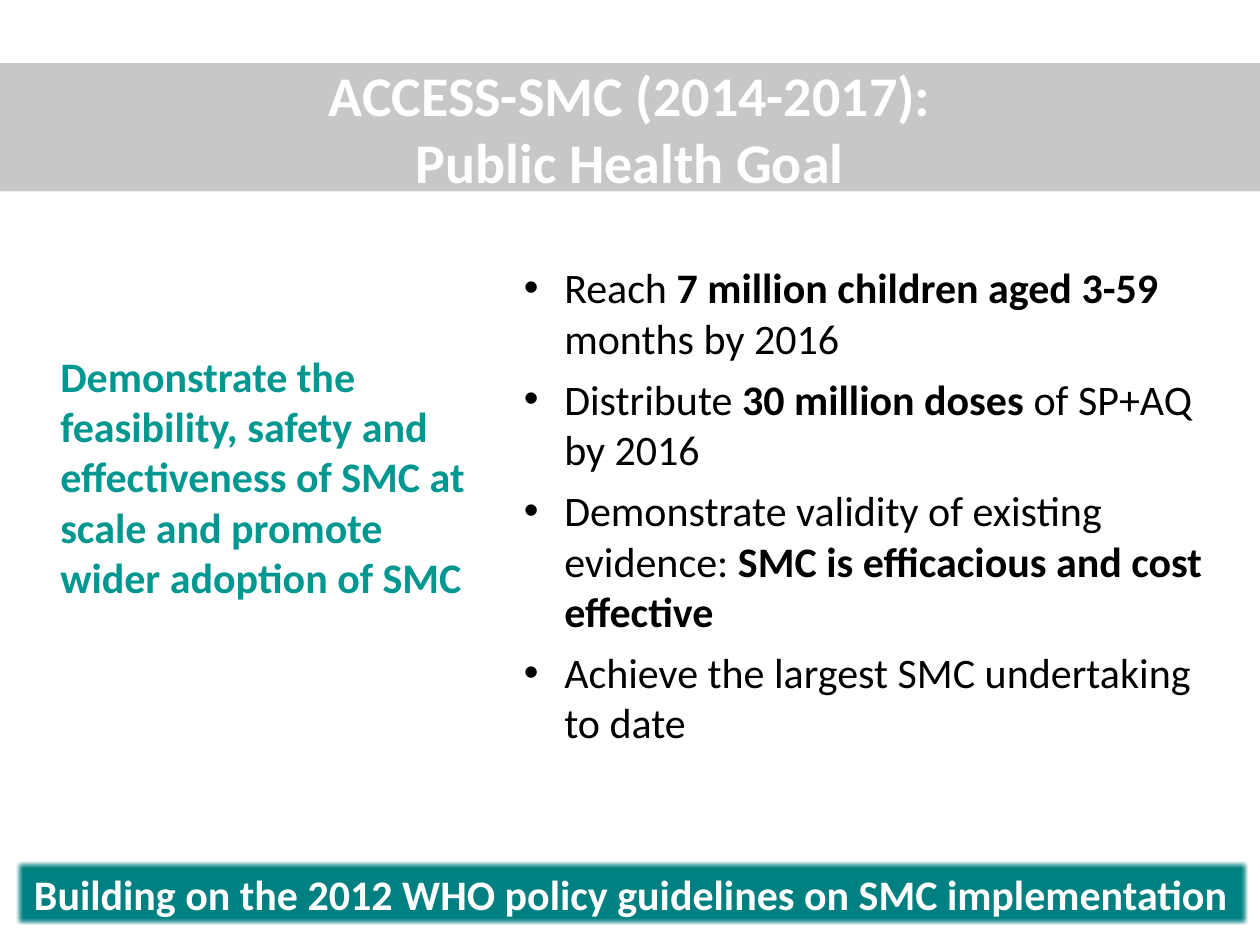
from lxml import etree
from pptx import Presentation
from pptx.dml.color import RGBColor
from pptx.enum.shapes import MSO_SHAPE
from pptx.enum.text import MSO_ANCHOR, MSO_AUTO_SIZE, PP_ALIGN
from pptx.oxml.ns import qn
from pptx.util import Inches, Pt

RECT = MSO_SHAPE.RECTANGLE
TOP, MIDDLE = MSO_ANCHOR.TOP, MSO_ANCHOR.MIDDLE
LEFT, CENTER = PP_ALIGN.LEFT, PP_ALIGN.CENTER
FIXED = MSO_AUTO_SIZE.NONE

# Content
TITLE = ["ACCESS-SMC (2014-2017):", "Public Health Goal"]
AIM = ("Demonstrate the feasibility, safety and effectiveness of SMC "
       "at scale and promote wider adoption of SMC")
# Each goal is a list of (text, bold) parts
GOALS = [
    [("Reach ", False), ("7 million children aged 3-59 ", True), ("months by 2016", False)],
    [("Distribute ", False), ("30 million doses ", True), ("of SP+AQ by 2016", False)],
    [("Demonstrate validity of existing evidence: ", False),
     ("SMC is efficacious and cost effective", True)],
    [("Achieve the largest SMC undertaking to date", False)],
]
BASIS = "Building on the 2012 WHO policy guidelines on SMC implementation"

THEME = {
    "font": "Calibri", "title": 32, "body": 24,
    "aim": "009790", "text": "000000", "light": "FFFFFF",
    "bar": "008080", "band": "A6A6A6",
}


def color(name):
    return RGBColor.from_string(THEME[name])


def style(para, size, tone, bold=None, align=LEFT):
    para.alignment = align
    font = para.font
    font.name, font.size = THEME["font"], Pt(THEME[size])
    font.color.rgb = color(tone)
    font.bold = bold


def place(shape, box):
    shape.left, shape.top, shape.width, shape.height = map(Inches, box)


def paint(shape, tone):
    shape.fill.solid()
    shape.fill.fore_color.rgb = color(tone)


def add_box(slide, box):
    frame = slide.shapes.add_textbox(*map(Inches, box)).text_frame
    frame.word_wrap = True
    return frame


def add_dot(para):
    props = para._p.get_or_add_pPr()
    props.set("marL", str(Inches(0.38)))
    props.set("indent", str(Inches(-0.32)))
    etree.SubElement(props, qn("a:buFont"), typeface="Arial")
    etree.SubElement(props, qn("a:buChar"), char="•")


deck = Presentation()
deck.slide_width, deck.slide_height = Inches(10), Inches(7.5)
slide = deck.slides.add_slide(deck.slide_layouts[5])

# Title on a translucent band
title = slide.shapes.title
place(title, (0, 0.5, 10, 1.02))
paint(title, "band")
tint = title._element.spPr.find(".//" + qn("a:srgbClr"))
etree.SubElement(tint, qn("a:alpha"), val="62000")
frame = title.text_frame
frame.text = "\n".join(TITLE)
frame.auto_size, frame.vertical_anchor = FIXED, MIDDLE
for para in frame.paragraphs:
    style(para, "title", "light", True, CENTER)

# Aim on the left
frame = add_box(slide, (0.38, 2.73, 3.45, 3.5))
frame.text = AIM
style(frame.paragraphs[0], "body", "aim", True)

# Goals on the right
frame = add_box(slide, (4, 2.03, 5.78, 3.99))
for i, goal in enumerate(GOALS):
    para = frame.add_paragraph() if i else frame.paragraphs[0]
    add_dot(para)
    style(para, "body", "text")
    if i:
        para.space_before = Pt(6)
    for words, bold in goal:
        run = para.add_run()
        run.text = words
        run.font.bold = bold

# Policy bar with soft edges
bar = slide.shapes.add_shape(RECT, *map(Inches, (0.13, 6.84, 9.77, 0.5)))
paint(bar, "bar")
bar.line.fill.background()
bar.shadow.inherit = False
effects = bar._element.spPr.find(qn("a:effectLst"))
etree.SubElement(effects, qn("a:softEdge"), rad=str(Pt(2.5)))
frame = bar.text_frame
frame.word_wrap, frame.vertical_anchor = True, TOP
frame.margin_left, frame.margin_right = Inches(0.14), Inches(0.1)
frame.text = BASIS
style(frame.paragraphs[0], "body", "light", True)

deck.save("out.pptx")
